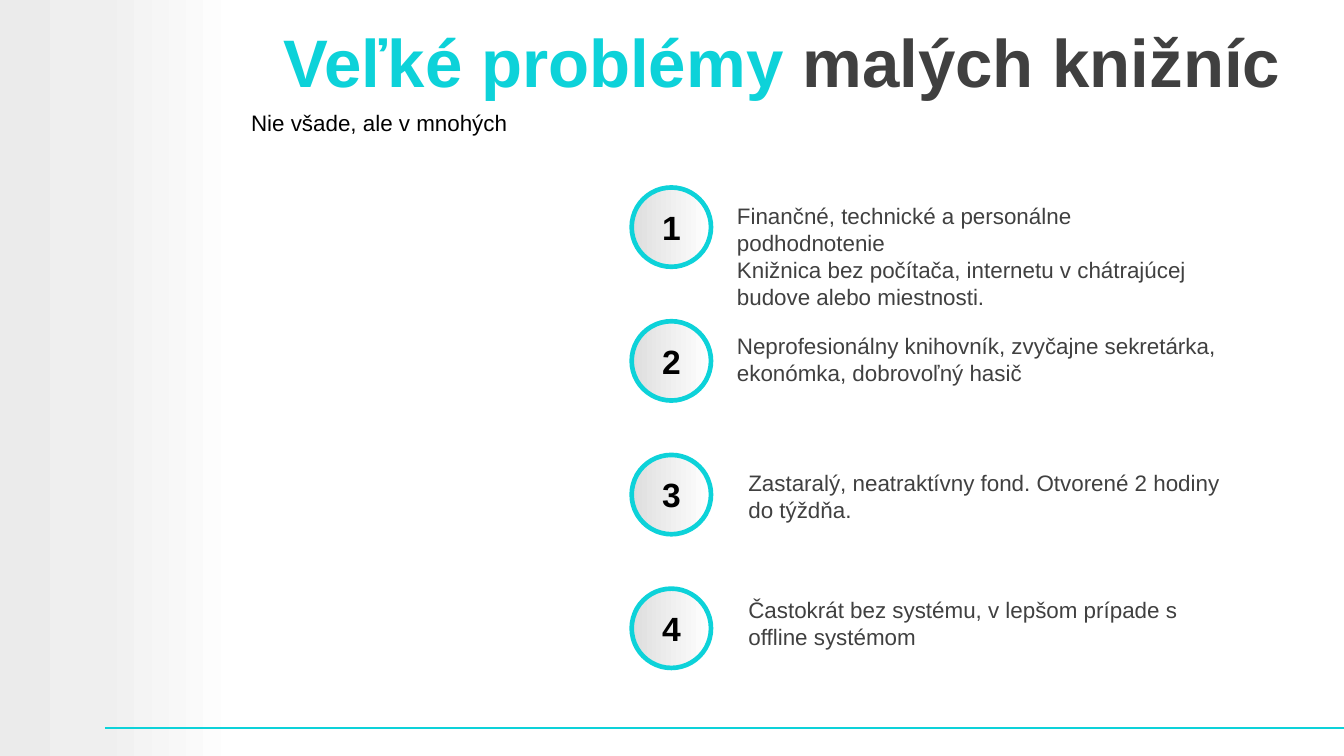
from copy import deepcopy

from lxml.etree import SubElement
from pptx import Presentation
from pptx.dml.color import RGBColor
from pptx.enum.shapes import MSO_CONNECTOR as Connector, MSO_SHAPE as Shape
from pptx.enum.text import MSO_ANCHOR as Anchor, PP_ALIGN as Align
from pptx.oxml.ns import qn
from pptx.util import Emu, Pt

PX = 4572
TURQUOISE = RGBColor(0x0D, 0xD2, 0xD9)
CHARCOAL = RGBColor(0x40, 0x40, 0x40)
BLACK = RGBColor(0x00, 0x00, 0x00)
WHITE = RGBColor(0xFF, 0xFF, 0xFF)
SILVER = RGBColor(0xDE, 0xDE, 0xDE)
MIST = RGBColor(0xEB, 0xEB, 0xEB)
PALE = RGBColor(0xEF, 0xEF, 0xEF)

PROBLEMS = [
    (1077, 291, 142, ["Finančné, technické a personálne podhodnotenie",
                      "Knižnica bez počítača, internetu v chátrajúcej budove alebo miestnosti."]),
    (1077, 485, 100, ["Neprofesionálny knihovník, zvyčajne sekretárka, ekonómka, dobrovoľný hasič"]),
    (1094, 689, 100, ["Zastaralý, neatraktívny fond. Otvorené 2 hodiny do týždňa."]),
    (1094, 878, 100, ["Častokrát bez systému, v lepšom prípade s offline systémom"]),
]


def px(*lengths):
    """Turn whole pixels into EMU."""
    return [Emu(length * PX) for length in lengths]


def add_span(para, text, size=12, color=CHARCOAL, bold=False, font="Arial"):
    """Add one formatted run to a paragraph."""
    span = para.add_run()
    span.text = text
    span.font.name = font
    span.font.size = Pt(size)
    span.font.bold = bold
    span.font.color.rgb = color


class SlideBuilder:
    """Hold the shared style and the current slide."""

    def __init__(self, slide, accent=TURQUOISE):
        self.slide = slide
        self.accent = accent

    def gradient_shape(self, kind, frame, stops, border=None, shapes=None):
        """Draw a preset shape with a left-to-right gradient."""
        shape = (shapes or self.slide.shapes).add_shape(kind, *px(*frame))
        shape.shadow.inherit = False
        shape.fill.gradient()
        shape.fill.gradient_angle = 0
        stop_list = next(shape._element.iter(qn("a:gsLst")))
        while len(stop_list) < len(stops):
            stop_list.append(deepcopy(stop_list[-1]))
        for stop, (position, color) in zip(shape.fill.gradient_stops, stops):
            stop.position = position
            stop.color.rgb = color
        if border:
            shape.line.color.rgb = self.accent
            shape.line.width = Pt(border)
        else:
            shape.line.fill.background()

    def rule(self, start, end, width=1):
        """Draw a straight accent line."""
        line = self.slide.shapes.add_connector(Connector.STRAIGHT, *px(*start, *end))
        line.line.color.rgb = self.accent
        line.line.width = Pt(width)
        SubElement(line._element.spPr, qn("a:effectLst"))

    def text(self, frame, paragraphs, anchor=Anchor.TOP, align=Align.LEFT,
             inset=20, shapes=None):
        """Write paragraphs, each a list of (text, format) pairs."""
        box = (shapes or self.slide.shapes).add_textbox(*px(*frame))
        text_frame = box.text_frame
        text_frame.word_wrap = True
        text_frame.vertical_anchor = anchor
        text_frame.margin_left = Emu(inset * PX)
        for index, spans in enumerate(paragraphs):
            para = text_frame.add_paragraph() if index else text_frame.paragraphs[0]
            para.alignment = align
            for text, style in spans:
                add_span(para, text, **style)

    def badge(self, number, left, top, size=118):
        """Draw a numbered circle as a group."""
        shapes = self.slide.shapes.add_group_shape().shapes
        self.gradient_shape(Shape.OVAL, (left, top, size, size),
                            [(0, SILVER), (1, WHITE)], border=2.5, shapes=shapes)
        self.text((left + 20, top + 19, 78, 80),
                  [[(str(number), dict(size=18, color=BLACK, bold=True))]],
                  anchor=Anchor.MIDDLE, align=Align.CENTER, shapes=shapes)


def main():
    """Build and save the slide."""
    deck = Presentation()
    deck.slide_width, deck.slide_height = px(2000, 1125)
    page = SlideBuilder(deck.slides.add_slide(deck.slide_layouts[6]))

    page.gradient_shape(Shape.RECTANGLE, (0, 0, 354, 1125),
                        [(0, MIST), (0.42, PALE), (1, WHITE)])
    page.rule((156, 1083), (2000, 1083))
    page.text((346, 5, 1654, 170),
              [[("Veľké problémy ", dict(size=36, color=TURQUOISE, bold=True)),
                ("malých knižníc", dict(size=36, bold=True))]],
              anchor=Anchor.MIDDLE, inset=76)
    page.text((354, 153, 1646, 58), [[("Nie všade, ale v mnohých", dict(color=BLACK))]])

    for index, (left, top, height, lines) in enumerate(PROBLEMS):
        page.badge(index + 1, 940, 279 + 199 * index)
        page.text((left, top, 766, height), [[(line, {})] for line in lines])

    deck.save("out.pptx")


if __name__ == "__main__":
    main()
